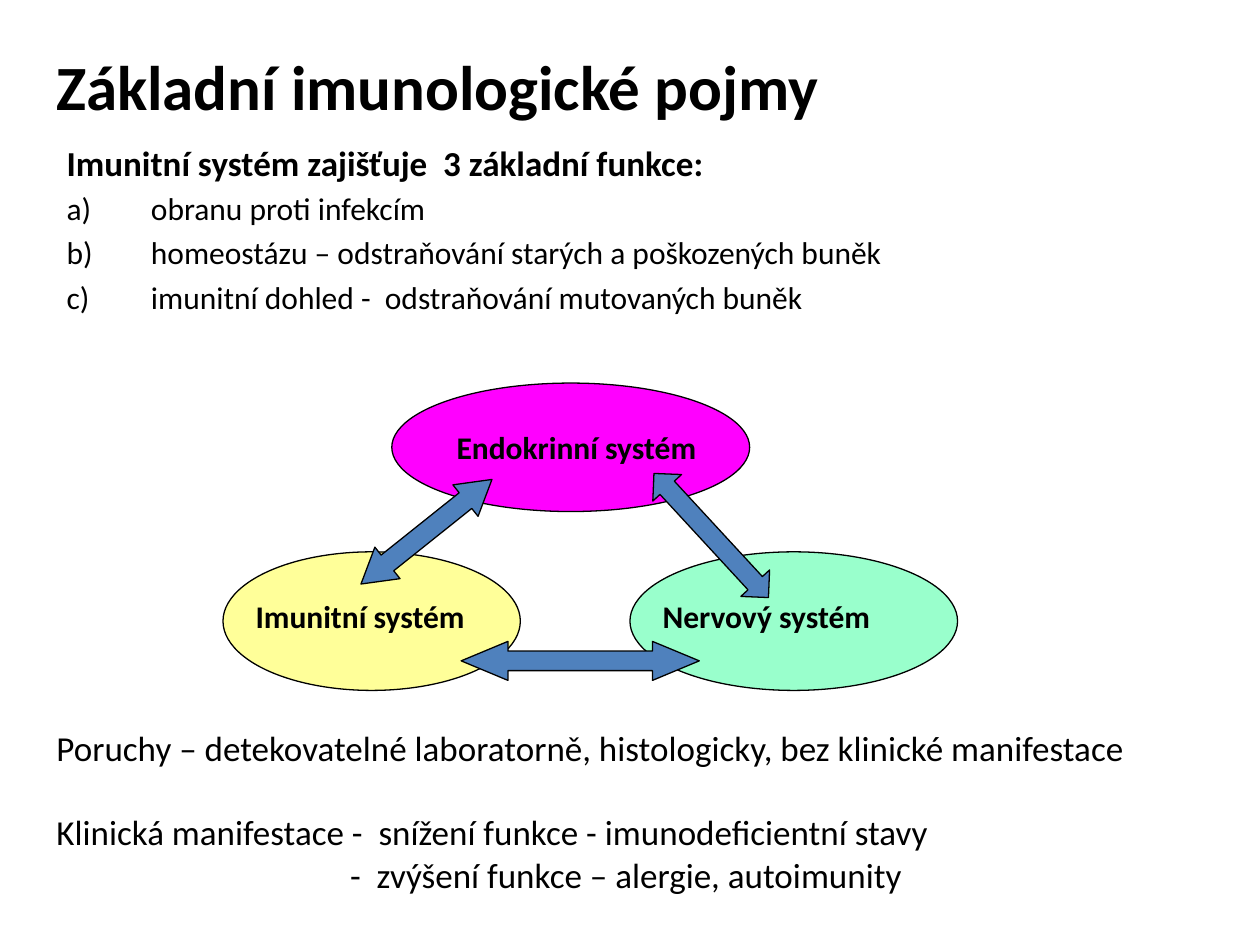
from pptx import Presentation
from pptx.util import Inches, Pt
from pptx.dml.color import RGBColor
from pptx.enum.shapes import MSO_SHAPE
from pptx.enum.text import MSO_ANCHOR, PP_ALIGN
from lxml import etree

OVAL = MSO_SHAPE.OVAL
WIDE = MSO_SHAPE.LEFT_RIGHT_ARROW
TALL = MSO_SHAPE.UP_DOWN_ARROW
TOP, MID = MSO_ANCHOR.TOP, MSO_ANCHOR.MIDDLE
LEFT = PP_ALIGN.LEFT
NS = "http://schemas.openxmlformats.org/drawingml/2006/main"
INK = {"black": "000000", "yellow": "FFFF99", "mint": "99FFCC",
       "pink": "FF00FF", "blue": "4F81BD"}

deck = Presentation()
deck.slide_width, deck.slide_height = Inches(10), Inches(7.5)
slide = deck.slides.add_slide(deck.slide_layouts[6])
COL, ROW = deck.slide_width / 100, deck.slide_height / 75


def place(x, y, w, h):
    return [round(n) for n in (x * COL, y * ROW, w * COL, h * ROW)]


def write(frame, text, size=18, bold=False, anchor=TOP, wrap=True,
          first=True, before=0, left=0, hang=0, mark=None):
    frame.word_wrap, frame.vertical_anchor = wrap, anchor
    para = frame.paragraphs[0] if first else frame.add_paragraph()
    para.alignment, para.space_before = LEFT, Pt(before)
    props = para._p.get_or_add_pPr()
    props.set("marL", str(round(left * COL)))
    props.set("indent", str(round(-hang * COL)))
    if mark:
        etree.SubElement(props, f"{{{NS}}}buFont", typeface="+mj-lt")
        etree.SubElement(props, f"{{{NS}}}buAutoNum", type=mark)
    run = para.add_run()
    run.text = text
    font = run.font
    font.name, font.size, font.bold = "Calibri", Pt(size), bold
    font.color.rgb = RGBColor.from_string(INK["black"])


title = slide.shapes.add_textbox(*place(3.5, 3.6, 85, 6.3))
write(title.text_frame, "Základní imunologické pojmy", size=36, bold=True, anchor=MID)

goals = slide.shapes.add_textbox(*place(4.3, 10.7, 89, 19.2)).text_frame
write(goals, "Imunitní systém zajišťuje  3 základní funkce:",
      size=20, bold=True, left=6.7, hang=6.7)
for goal in ("obranu proti infekcím",
             "homeostázu – odstraňování starých a poškozených buněk",
             "imunitní dohled -  odstraňování mutovaných buněk"):
    write(goals, goal, first=False, before=3.6, left=6.7, hang=6.7, mark="alphaLcParenR")

parts = [
    (OVAL, (17.7, 43.8, 23.6, 11), "yellow", 0, ()),
    (OVAL, (50, 43.8, 26, 11), "mint", 0, ()),
    (OVAL, (31.1, 30.4, 28.4, 10.2), "pink", 0, ()),
    (WIDE, (27.2, 40.6, 13.3, 3.2), "blue", 321.4, (0.5, 0.84)),
    (TALL, (54.9, 35.8, 3.1, 13.4), "blue", 317.3, (0.88, 0.5)),
    (WIDE, (36.6, 50.9, 18.9, 3.1), "blue", 0, (0.5, 1.2)),
]
for kind, area, hue, turn, bends in parts:
    shape = slide.shapes.add_shape(kind, *place(*area))
    shape.shadow.inherit = False
    shape.rotation = turn
    shape.fill.solid()
    shape.fill.fore_color.rgb = RGBColor.from_string(INK[hue])
    shape.line.color.rgb = RGBColor.from_string(INK["black"])
    shape.line.width = Pt(0.75)
    for i, bend in enumerate(bends):
        shape.adjustments[i] = bend
    if hue == "pink":
        write(shape.text_frame, "Endokrinní systém", bold=True, anchor=MID, wrap=False)

for x, w, name in ((19.3, 21, "Imunitní systém"), (51.6, 24.9, "Nervový systém")):
    label = slide.shapes.add_textbox(*place(x, 46.9, w, 4))
    write(label.text_frame, name, bold=True)

notes = slide.shapes.add_textbox(*place(3.5, 57.2, 87.6, 14.5)).text_frame
write(notes, "Poruchy – detekovatelné laboratorně, histologicky, bez klinické manifestace", size=20)
write(notes, "Klinická manifestace -  snížení funkce - imunodeficientní stavy",
      size=20, first=False, before=24)
write(notes, "-  zvýšení funkce – alergie, autoimunity", size=20, first=False, left=23.3)

deck.save("out.pptx")
